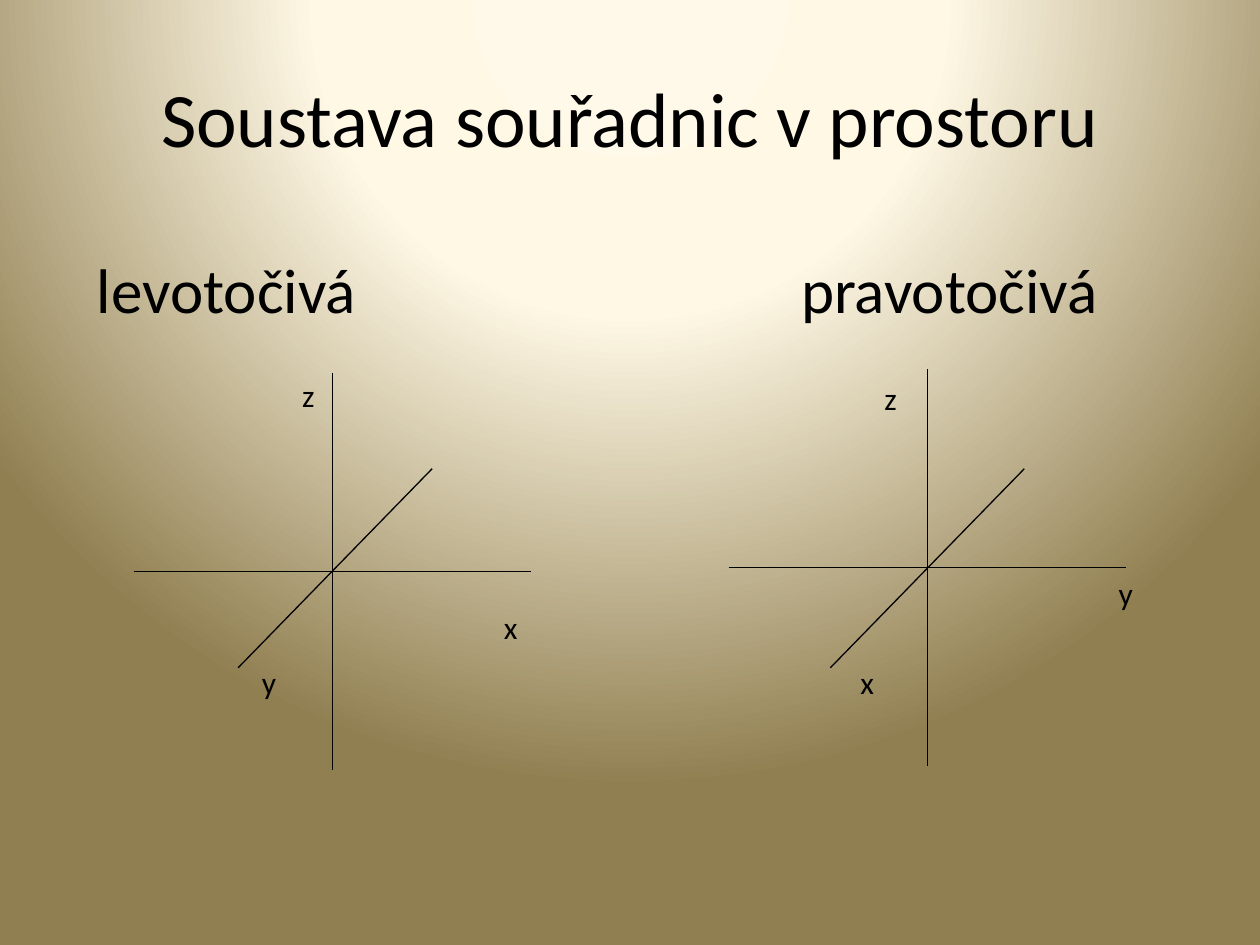
from lxml import etree
from pptx import Presentation
from pptx.dml.color import RGBColor
from pptx.enum.shapes import MSO_CONNECTOR
from pptx.enum.text import MSO_ANCHOR, PP_ALIGN
from pptx.oxml.ns import qn
from pptx.util import Inches, Pt

STRAIGHT = MSO_CONNECTOR.STRAIGHT
LEFT, CENTER = PP_ALIGN.LEFT, PP_ALIGN.CENTER
TOP, MIDDLE = MSO_ANCHOR.TOP, MSO_ANCHOR.MIDDLE

COLORS = {"ink": "000000", "glow": "FFF9EA", "cream": "FFF8E5", "olive": "907F51"}
COLUMNS, ROWS = 100, 75
ARM = 15.75
SLANT_X, SLANT_Y = 7.7, 7.9


class Canvas:
    font = "Calibri"
    line_width = Pt(0.75)

    def __init__(self, deck):
        self.column = deck.slide_width / COLUMNS
        self.row = deck.slide_height / ROWS
        self.page = deck.slides.add_slide(deck.slide_layouts[6])

    def place(self, *lengths):
        units = (self.column, self.row)
        return [round(length * units[i % 2]) for i, length in enumerate(lengths)]

    def background(self, stops):
        fill = self.page.background.fill
        fill.gradient()
        gradient = next(self.page.element.iter(qn("a:gradFill")))
        for child in list(gradient):
            gradient.remove(child)
        stop_list = etree.SubElement(gradient, qn("a:gsLst"))
        for percent, color in stops:
            stop = etree.SubElement(stop_list, qn("a:gs"), pos=str(percent * 1000))
            etree.SubElement(stop, qn("a:srgbClr"), val=COLORS[color])
        circle = etree.SubElement(gradient, qn("a:path"), path="circle")
        etree.SubElement(circle, qn("a:fillToRect"),
                         l="50000", t="-80000", r="50000", b="180000")

    def text(self, words, area, size, align=LEFT, anchor=TOP, wrap=True):
        box = self.page.shapes.add_textbox(*self.place(*area))
        frame = box.text_frame
        frame.word_wrap = wrap
        frame.vertical_anchor = anchor
        para = frame.paragraphs[0]
        para.alignment = align
        span = para.add_run()
        span.text = words
        span.font.name = self.font
        span.font.size = Pt(size)
        span.font.color.rgb = RGBColor.from_string(COLORS["ink"])

    def line(self, shapes, *ends):
        connector = shapes.add_connector(STRAIGHT, *self.place(*ends))
        connector.line.width = self.line_width
        connector.line.color.rgb = RGBColor.from_string(COLORS["ink"])
        etree.SubElement(connector._element.spPr, qn("a:effectLst"))

    def axes(self, origin, slant_center, labels):
        x, y = origin
        cross = self.page.shapes.add_group_shape().shapes
        self.line(cross, x - ARM, y, x + ARM, y)
        self.line(cross, x, y - ARM, x, y + ARM)
        x, y = slant_center
        self.line(self.page.shapes, x + SLANT_X, y - SLANT_Y, x - SLANT_X, y + SLANT_Y)
        for letter, left, top in labels:
            self.text(letter, (left, top, 3.1, 4), 18, wrap=False)


def main():
    deck = Presentation()
    deck.slide_width, deck.slide_height = Inches(10), Inches(7.5)
    canvas = Canvas(deck)
    canvas.background([(0, "glow"), (40, "cream"), (100, "olive")])
    canvas.text("Soustava souřadnic v prostoru", (5, 3, 90, 12.5), 44,
                align=CENTER, anchor=MIDDLE)
    for heading, left in (("levotočivá", 6.7), ("pravotočivá", 62.6)):
        canvas.text(heading, (left, 19.4, 26.8, 7.1), 36)
    canvas.axes((26.4, 45.35), (26.6, 45.1),
                [("x", 39, 47.75), ("y", 19.8, 52.1), ("z", 23, 29.35)])
    canvas.axes((73.6, 45.05), (73.6, 45.1),
                [("x", 67.3, 52.1), ("y", 87.8, 45.1), ("z", 69.2, 29.6)])
    deck.save("out.pptx")


if __name__ == "__main__":
    main()
